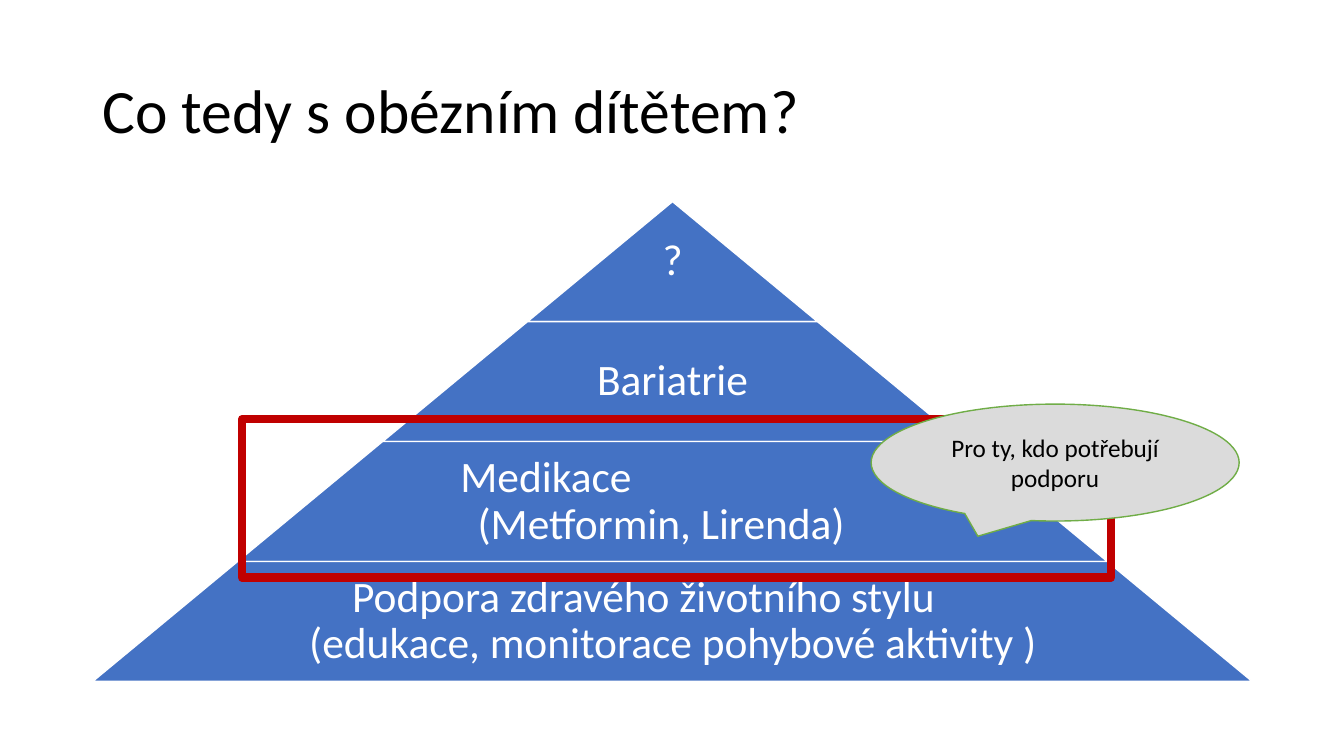
import pptx
import pptx.util
import pptx.dml.color
import pptx.enum.shapes
import pptx.enum.text

Inches = pptx.util.Inches
Pt = pptx.util.Pt
KIND = pptx.enum.shapes.MSO_SHAPE
ALIGN = pptx.enum.text.PP_ALIGN
HUES = {"black": "000000", "white": "FFFFFF", "blue": "4472C4",
        "red": "C00000", "gray": "DBDBDB", "green": "70AD47"}


class Deck:
    """Draws styled elements on the current slide."""

    def __init__(self):
        self.show = pptx.Presentation()
        self.show.slide_width = Inches(13.33)
        self.show.slide_height = Inches(7.5)
        self.font = "Calibri"
        self.slide = self.show.slides.add_slide(self.show.slide_layouts[6])

    def hue(self, name):
        return pptx.dml.color.RGBColor.from_string(HUES[name])

    def shape(self, kind, spot, fill, line, width, tweaks=()):
        item = self.slide.shapes.add_shape(kind, *map(Inches, spot))
        item.shadow.inherit = False
        for index, value in enumerate(tweaks):
            item.adjustments[index] = value
        if fill:
            item.fill.solid()
            item.fill.fore_color.rgb = self.hue(fill)
        else:
            item.fill.background()
        item.line.color.rgb = self.hue(line)
        item.line.width = Pt(width)
        return item

    def label(self, item, lines, size, color, align=ALIGN.CENTER, space=0.9, inset=None):
        frame = item.text_frame
        look = {"word_wrap": True, "vertical_anchor": pptx.enum.text.MSO_ANCHOR.MIDDLE}
        if inset is not None:
            for side in ("left", "right", "top", "bottom"):
                look["margin_" + side] = Inches(inset)
        for key, value in look.items():
            setattr(frame, key, value)
        for index, (text, indent) in enumerate(lines):
            para = frame.add_paragraph() if index else frame.paragraphs[0]
            para.text = text
            para.line_spacing = space
            para.alignment = align if indent is None else ALIGN.LEFT
            if indent is not None:
                para._p.get_or_add_pPr().set("marL", str(Inches(indent)))
            for key, value in {"name": self.font, "size": Pt(size)}.items():
                setattr(para.font, key, value)
            para.font.color.rgb = self.hue(color)

    def text(self, spot, lines, size, color, **style):
        box = self.slide.shapes.add_textbox(*map(Inches, spot))
        self.label(box, lines, size, color, **style)

    def tier(self, rank, lines):
        step, high, mid = 2.875, 1.19, 6.67
        wide, top = step * (rank + 1), 2 + high * rank
        self.shape(KIND.TRAPEZOID, (mid - wide / 2, top, wide, high),
                   "blue", "white", 1, [step / 2 / high])
        room = wide * 0.65 if rank else wide
        self.text((mid - room / 2, top, room, high), lines, 31, "white", inset=0.04)


def main():
    deck = Deck()
    deck.text((0.92, 0.4, 11.5, 1.45), [("Co tedy s obézním dítětem?", None)],
              44, "black", align=ALIGN.LEFT)
    tiers = [
        [("?", None)],
        [("Bariatrie", None)],
        [("Medikace", 0.66), ("(Metformin, Lirenda)", 0.83)],
        [("Podpora zdravého životního stylu", 0.52),
         ("(edukace, monitorace pohybové aktivity )", None)],
    ]
    for rank, lines in enumerate(tiers):
        deck.tier(rank, lines)
    deck.shape(KIND.RECTANGLE, (2.4, 4.16, 8.62, 1.57), None, "red", 6)
    bubble = deck.shape(KIND.OVAL_CALLOUT, (8.64, 4.01, 3.65, 1.16),
                        "gray", "green", 1, [-0.21, 0.63])
    deck.label(bubble, [("Pro ty, kdo potřebují podporu", None)], 18, "black", space=1.0)
    deck.show.save("out.pptx")


if __name__ == "__main__":
    main()
